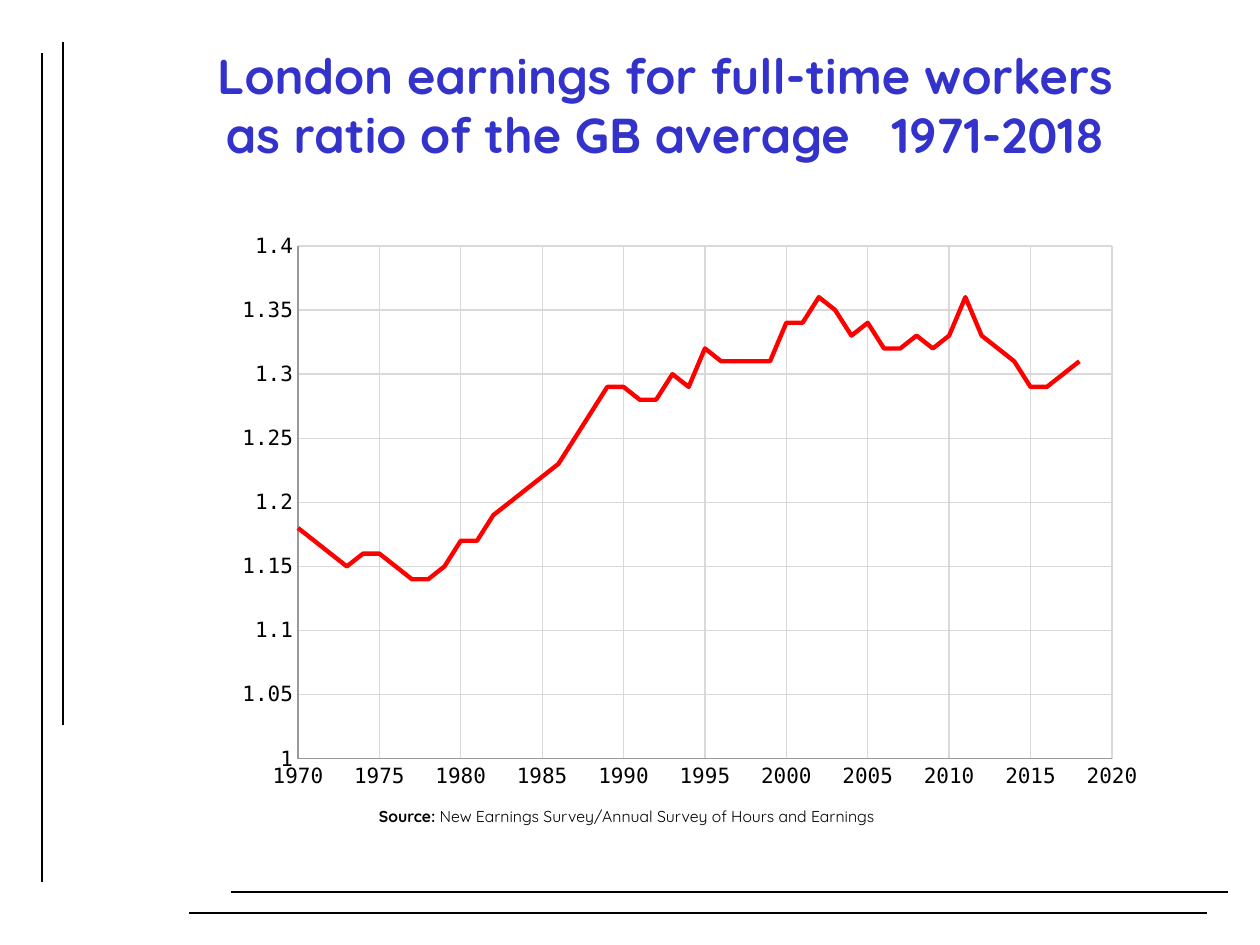
from dataclasses import dataclass

from lxml import etree
from pptx import Presentation
from pptx import util as u
from pptx.chart.data import XyChartData
from pptx.dml.color import RGBColor
from pptx.enum import chart as charts, shapes, text
from pptx.oxml import parse_xml
from pptx.oxml.ns import nsdecls, qn


@dataclass(frozen=True)
class Theme:
    font: str = "Quicksand"
    chart_font: str = "DejaVu Sans Mono"
    title: RGBColor = RGBColor(0x33, 0x33, 0xCC)
    ink: RGBColor = RGBColor(0, 0, 0)
    axis: RGBColor = RGBColor(0x99, 0x99, 0x99)
    grid: RGBColor = RGBColor(0xD9, 0xD9, 0xD9)
    series: RGBColor = RGBColor(0xFF, 0, 0)
    title_size: int = 28
    label_size: int = 12
    source_size: int = 9
    thin: float = 0.75
    thick: float = 2.5


THEME = Theme()
PX_PER_INCH = 126
SLIDE_SIZE = (1260, 945)
TITLE_BOX = (134, 39, 1062, 183)
CHART_BOX = (223, 222, 932, 578)
PLOT_BOX = (75, 24, 814, 513)  # relative to CHART_BOX
SOURCE_BOX = (379, 800, 514, 32)
TITLE_GAP = 16  # points added to the space before the dates
FIRST_YEAR = 1970
EARNINGS_RATIO = [
    1.18, 1.17, 1.16, 1.15, 1.16, 1.16, 1.15, 1.14, 1.14, 1.15,
    1.17, 1.17, 1.19, 1.2, 1.21, 1.22, 1.23, 1.25, 1.27, 1.29,
    1.29, 1.28, 1.28, 1.3, 1.29, 1.32, 1.31, 1.31, 1.31, 1.31,
    1.34, 1.34, 1.36, 1.35, 1.33, 1.34, 1.32, 1.32, 1.33, 1.32,
    1.33, 1.36, 1.33, 1.32, 1.31, 1.29, 1.29, 1.3, 1.31,
]


def px(length):
    return u.Emu(round(length * u.Inches(1) / PX_PER_INCH))


def set_font(font, name, size, color, bold=False):
    font.name, font.size, font.bold = name, u.Pt(size), bold
    font.color.rgb = color


def set_line(line, color, width):
    line.color.rgb = color
    line.width = u.Pt(width)


def add_rule(slide, x1, y1, x2, y2):
    rule = slide.shapes.add_connector(
        shapes.MSO_CONNECTOR.STRAIGHT, px(x1), px(y1), px(x2), px(y2))
    set_line(rule.line, THEME.ink, THEME.thin)
    etree.SubElement(rule._element.spPr, qn("a:effectLst"))


def add_frame_rules(slide, width, height):
    """Draw the staggered pairs of rules along the left and bottom edges."""
    add_rule(slide, 42, 53, 42, height - 63)
    add_rule(slide, 189, height - 32, width - 53, height - 32)
    add_rule(slide, 231, height - 53, width - 32, height - 53)
    add_rule(slide, 63, 42, 63, 725)


def add_title(slide, box):
    title = slide.shapes.title
    title.left, title.top, title.width, title.height = map(px, box)
    frame = title.text_frame
    frame.word_wrap = True
    frame.auto_size = text.MSO_AUTO_SIZE.NONE
    frame.vertical_anchor = text.MSO_ANCHOR.TOP
    frame.text = "London earnings for full-time workers"
    second_line = frame.add_paragraph()
    for part in ("as ratio of the GB average", " ", "1971-2018"):
        second_line.add_run().text = part
    for paragraph in frame.paragraphs:
        paragraph.alignment = text.PP_ALIGN.CENTER
        for run in paragraph.runs:
            set_font(run.font, THEME.font, THEME.title_size, THEME.title, True)
    gap = second_line.runs[1]
    gap._r.get_or_add_rPr().set("spc", str(TITLE_GAP * 100))


def set_plot_area(chart, box, plot_box):
    """Fix the inner plot area, given in px relative to the chart box."""
    _, _, width, height = box
    left, top, plot_width, plot_height = plot_box
    fractions = {"x": left / width, "y": top / height,
                 "w": plot_width / width, "h": plot_height / height}
    settings = "".join(f'<c:{key} val="{value:.4f}"/>'
                       for key, value in fractions.items())
    plot_area = chart.element.xpath("c:chart/c:plotArea")[0]
    for layout in plot_area.findall(qn("c:layout")):
        plot_area.remove(layout)
    plot_area.insert(0, parse_xml(
        f'<c:layout {nsdecls("c")}><c:manualLayout>'
        '<c:layoutTarget val="inner"/>'
        '<c:xMode val="edge"/><c:yMode val="edge"/>'
        f'{settings}</c:manualLayout></c:layout>'))


def style_axis(axis, minimum, maximum, step):
    axis.minimum_scale, axis.maximum_scale = minimum, maximum
    axis.major_unit = step
    axis.crosses = charts.XL_AXIS_CROSSES.MINIMUM
    axis.major_tick_mark = axis.minor_tick_mark = charts.XL_TICK_MARK.NONE
    axis.has_major_gridlines = True
    set_line(axis.major_gridlines.format.line, THEME.grid, THEME.thin)
    set_line(axis.format.line, THEME.axis, THEME.thin)
    labels = axis.tick_labels
    labels.number_format, labels.number_format_is_linked = "General", False
    set_font(labels.font, THEME.chart_font, THEME.label_size, THEME.ink)


def add_earnings_chart(slide, box):
    data = XyChartData()
    points = data.add_series("Series 1")
    for year, ratio in enumerate(EARNINGS_RATIO, FIRST_YEAR):
        points.add_data_point(year, ratio)
    chart = slide.shapes.add_chart(
        charts.XL_CHART_TYPE.XY_SCATTER_LINES_NO_MARKERS,
        *map(px, box), data).chart
    chart.has_legend = chart.has_title = False
    set_font(chart.font, THEME.chart_font, THEME.label_size, THEME.ink)
    style_axis(chart.category_axis, FIRST_YEAR, 2020, 5)
    style_axis(chart.value_axis, 1, 1.4, 0.05)
    plot = chart.plots[0]
    plot.vary_by_categories = False
    series = plot.series[0]
    series.smooth = False
    series.marker.style = charts.XL_MARKER_STYLE.NONE
    set_line(series.format.line, THEME.series, THEME.thick)
    set_plot_area(chart, box, PLOT_BOX)


def add_source(slide, box):
    frame = slide.shapes.add_textbox(*map(px, box)).text_frame
    frame.word_wrap = True
    frame.margin_left = frame.margin_right = 0
    frame.vertical_anchor = text.MSO_ANCHOR.MIDDLE
    paragraph = frame.paragraphs[0]
    for part, bold in (
            ("Source:", True),
            (" New Earnings Survey/Annual Survey of Hours and Earnings", False)):
        run = paragraph.add_run()
        run.text = part
        set_font(run.font, THEME.font, THEME.source_size, THEME.ink, bold)


def main():
    presentation = Presentation()
    presentation.slide_width, presentation.slide_height = map(px, SLIDE_SIZE)
    title_only = presentation.slide_layouts[5]
    slide = presentation.slides.add_slide(title_only)
    add_frame_rules(slide, *SLIDE_SIZE)
    add_title(slide, TITLE_BOX)
    add_source(slide, SOURCE_BOX)
    add_earnings_chart(slide, CHART_BOX)
    presentation.save("out.pptx")


if __name__ == "__main__":
    main()
